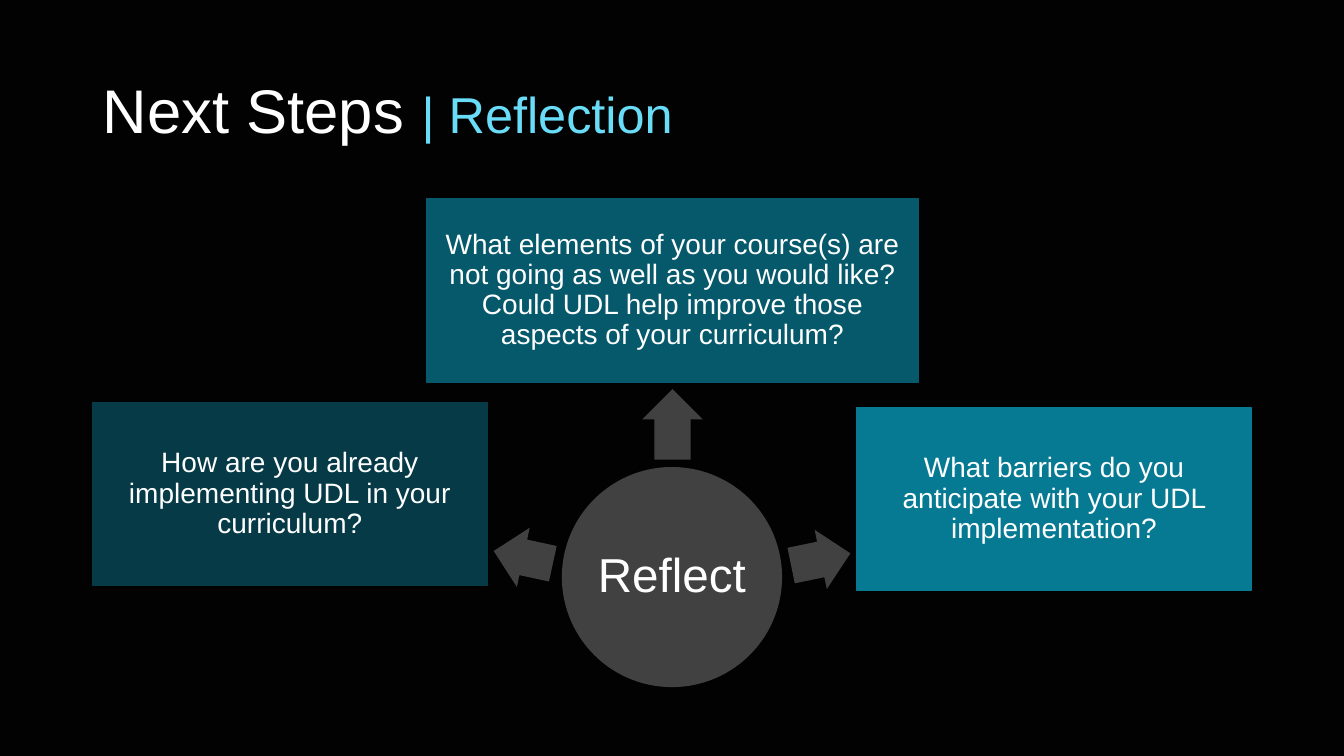
from pptx import Presentation
from pptx.dml.color import RGBColor
from pptx.enum import shapes, text
from pptx.util import Inches, Pt

BLACK = RGBColor(0x02, 0x02, 0x02)
WHITE = RGBColor(0xFF, 0xFF, 0xFF)
CYAN = RGBColor(0x69, 0xDD, 0xF7)
GRAY = RGBColor(0x41, 0x41, 0x41)
DARK_TEAL = RGBColor(0x05, 0x3A, 0x46)
MID_TEAL = RGBColor(0x06, 0x59, 0x6B)
LIGHT_TEAL = RGBColor(0x07, 0x7A, 0x93)
FONT = "Arial"

QUESTIONS = [
    ("How are you already implementing UDL in your curriculum?",
     DARK_TEAL, (0.92, 3.99, 3.91, 1.82)),
    ("What elements of your course(s) are not going as well as you would like? "
     "Could UDL help improve those aspects of your curriculum?",
     MID_TEAL, (4.23, 1.97, 4.88, 1.82)),
    ("What barriers do you anticipate with your UDL implementation?",
     LIGHT_TEAL, (8.5, 4.04, 3.91, 1.82)),
]
ARROWS = [
    (12.2, (4.89, 5.23, 0.6, 0.6)),
    (90, (6.32, 3.91, 0.7, 0.6)),
    (168.4, (7.84, 5.25, 0.6, 0.6)),
]


def add_title(slide, box):
    """Place the two-tone title in the title placeholder."""
    title = slide.shapes.title
    title.left, title.top, title.width, title.height = map(Inches, box)
    frame = title.text_frame
    frame.auto_size = text.MSO_AUTO_SIZE.NONE
    frame.vertical_anchor = text.MSO_ANCHOR.MIDDLE
    paragraph = frame.paragraphs[0]
    paragraph.alignment = text.PP_ALIGN.LEFT
    paragraph.line_spacing = 0.9
    for words, size, color in (("Next Steps ", 44, WHITE), ("| Reflection", 36, CYAN)):
        run = paragraph.add_run()
        run.text = words
        run.font.name = FONT
        run.font.size = Pt(size)
        run.font.color.rgb = color


def add_filled_shape(slide, preset, box, color):
    """Add a flat preset shape without a shadow or outline."""
    shape = slide.shapes.add_shape(preset, *map(Inches, box))
    shape.shadow.inherit = False
    shape.fill.solid()
    shape.fill.fore_color.rgb = color
    shape.line.fill.background()
    return shape


def add_labelled_shape(slide, preset, box, color, label, size, inset):
    """Add an outlined shape with a centred label."""
    shape = add_filled_shape(slide, preset, box, color)
    shape.line.color.rgb = color
    shape.line.width = Pt(1)
    frame = shape.text_frame
    frame.word_wrap = True
    frame.vertical_anchor = text.MSO_ANCHOR.MIDDLE
    frame.margin_left = frame.margin_right = Inches(inset)
    frame.margin_top = frame.margin_bottom = Inches(inset)
    paragraph = frame.paragraphs[0]
    paragraph.text = label
    paragraph.alignment = text.PP_ALIGN.CENTER
    paragraph.line_spacing = 0.9
    paragraph.font.name = FONT
    paragraph.font.size = Pt(size)
    paragraph.font.color.rgb = WHITE


def add_arrow(slide, box, rotation):
    """Add a block arrow pointing from the hub to a question."""
    arrow = add_filled_shape(slide, shapes.MSO_SHAPE.LEFT_ARROW, box, GRAY)
    arrow.adjustments[0] = 0.6
    arrow.adjustments[1] = 0.5
    arrow.rotation = rotation


def add_reflection_diagram(slide, hub_box):
    """Draw the hub, its arrows and the three questions."""
    add_labelled_shape(slide, shapes.MSO_SHAPE.OVAL, hub_box, GRAY, "Reflect", 34, 0.02)
    for rotation, box in ARROWS:
        add_arrow(slide, box, rotation)
    for question, color, box in QUESTIONS:
        add_labelled_shape(slide, shapes.MSO_SHAPE.RECTANGLE, box, color, question, 20, 0.04)


def main():
    """Build and save the slide."""
    presentation = Presentation()
    presentation.slide_width = Inches(13.33)
    presentation.slide_height = Inches(7.5)
    slide = presentation.slides.add_slide(presentation.slide_layouts.get_by_name("Title Only"))
    slide.background.fill.solid()
    slide.background.fill.fore_color.rgb = BLACK
    add_title(slide, (0.92, 0.4, 11.5, 1.45))
    add_reflection_diagram(slide, (5.58, 4.64, 2.17, 2.17))
    presentation.save("out.pptx")


if __name__ == "__main__":
    main()
